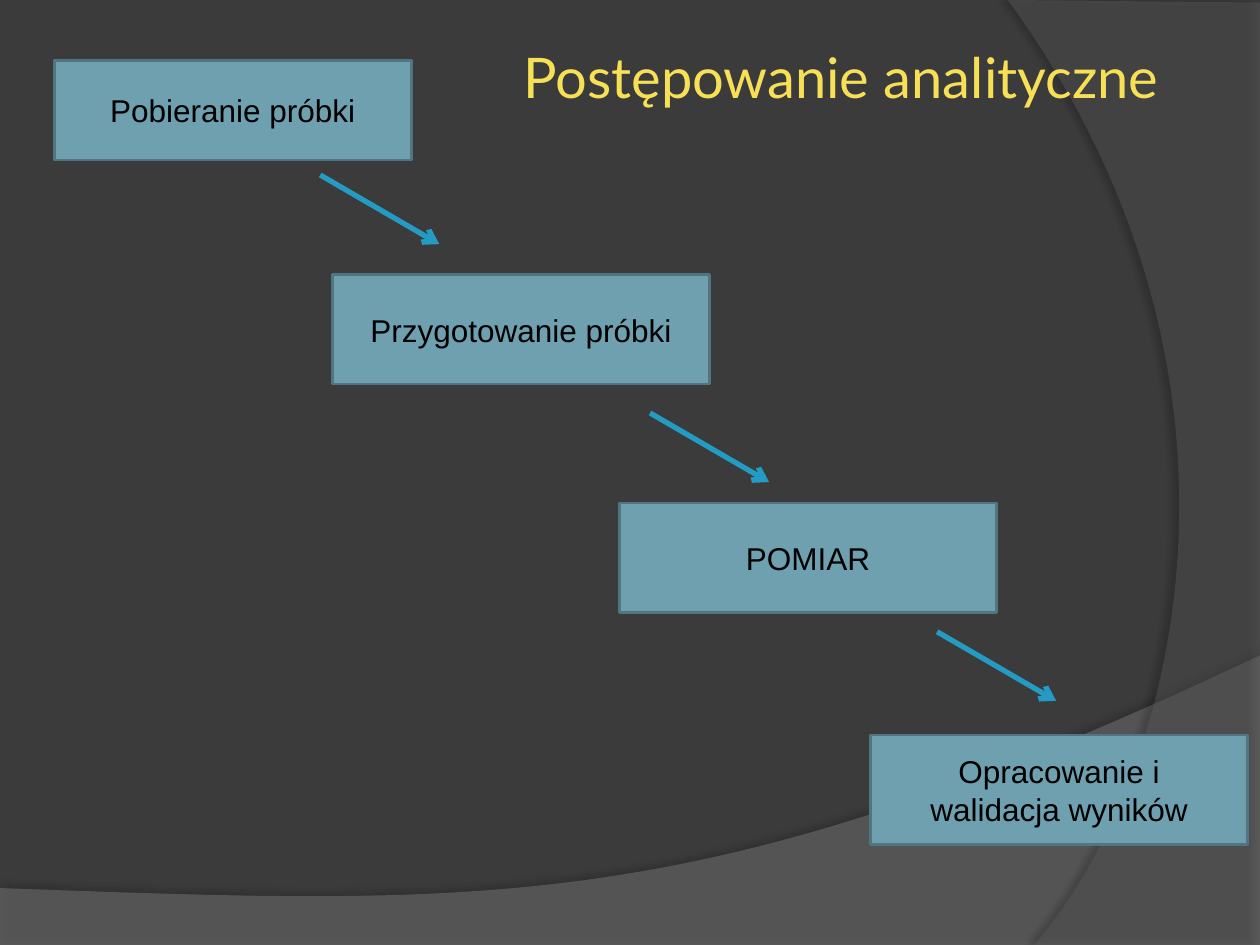
from lxml.etree import SubElement
from pptx import Presentation
from pptx.dml.color import RGBColor
from pptx.enum.shapes import MSO_CONNECTOR, MSO_SHAPE
from pptx.enum.text import MSO_ANCHOR, PP_ALIGN
from pptx.oxml.ns import qn
from pptx.util import Pt

COLORS = {
    "background": "3B3B3B", "wave": "7F7F7F", "arc": "5E5E5E", "shadow": "000000",
    "title": "F7DF56", "box": "6EA0B0", "outline": "517682",
    "label": "000000", "arrow": "239BC2",
}
CURVE_STEPS = 60

# text, left, top, width, height, side inset
STEPS = [
    ("Pobieranie próbki", 31, 34.5, 204, 57, 8),
    ("Przygotowanie próbki", 190, 157, 215.5, 62.5, 8),
    ("POMIAR", 354, 287.5, 215.5, 62.5, 8),
    ("Opracowanie i walidacja wyników", 497.5, 420, 215.5, 62.5, 24),
]
ARROW_STARTS = [(183, 100), (371.5, 236), (535.5, 361)]
ARROW_RUN, ARROW_DROP = 68, 39.5


def color(name):
    return RGBColor.from_string(COLORS[name])


def bezier(start, control_1, control_2, end):
    """Points along a cubic curve, both ends included."""
    points = []
    for step in range(CURVE_STEPS + 1):
        t = step / CURVE_STEPS
        weights = ((1 - t) ** 3, 3 * t * (1 - t) ** 2, 3 * t ** 2 * (1 - t), t ** 3)
        corners = (start, control_1, control_2, end)
        points.append(tuple(sum(w * c[axis] for w, c in zip(weights, corners))
                            for axis in (0, 1)))
    return points


def write(frame, text, *, font, size, ink, align, inset, inset_y=3.6):
    frame.word_wrap = True
    frame.vertical_anchor = MSO_ANCHOR.MIDDLE
    frame.margin_left = frame.margin_right = Pt(inset)
    frame.margin_top = frame.margin_bottom = Pt(inset_y)
    paragraph = frame.paragraphs[0]
    paragraph.alignment = align
    run = paragraph.add_run()
    run.text = text
    run.font.name = font
    run.font.size = Pt(size)
    run.font.color.rgb = color(ink)


class SlideBuilder:
    """Holds the text style and the slide being filled."""

    def __init__(self, slide, title_font="Lato", label_font="Arial"):
        self.slide = slide
        self.title_font = title_font
        self.label_font = label_font

    def background(self, name):
        fill = self.slide.background.fill
        fill.solid()
        fill.fore_color.rgb = color(name)

    def band(self, points, name, opacity, shadow_opacity, distance, direction):
        """Translucent outline with a soft shadow."""
        outline = [(Pt(x), Pt(y)) for x, y in points]
        builder = self.slide.shapes.build_freeform(*outline[0])
        builder.add_line_segments(outline[1:], close=True)
        shape = builder.convert_to_shape()
        shape.fill.solid()
        shape.fill.fore_color.rgb = color(name)
        shape.line.fill.background()
        properties = shape._element.spPr
        fill_color = properties.find(qn("a:solidFill"))[0]
        SubElement(fill_color, qn("a:alpha"), val=str(opacity * 1000))
        effects = SubElement(properties, qn("a:effectLst"))
        shadow = SubElement(effects, qn("a:outerShdw"), blurRad=str(Pt(4)),
                            dist=str(Pt(distance)), dir=str(direction * 60000),
                            rotWithShape="0")
        shadow_color = SubElement(shadow, qn("a:srgbClr"), val=COLORS["shadow"])
        SubElement(shadow_color, qn("a:alpha"), val=str(shadow_opacity * 1000))

    def title(self, text, left, top, width, height):
        title = self.slide.shapes.title
        title.left, title.top = Pt(left), Pt(top)
        title.width, title.height = Pt(width), Pt(height)
        write(title.text_frame, text, font=self.title_font, size=32, ink="title",
              align=PP_ALIGN.RIGHT, inset=3.6)
        self.slide.shapes._spTree.append(title._element)  # in front of the bands

    def step(self, text, left, top, width, height, inset):
        box = self.slide.shapes.add_shape(
            MSO_SHAPE.RECTANGLE, Pt(left), Pt(top), Pt(width), Pt(height))
        box.shadow.inherit = False
        box.fill.solid()
        box.fill.fore_color.rgb = color("box")
        box.line.color.rgb = color("outline")
        box.line.width = Pt(1.5)
        write(box.text_frame, text, font=self.label_font, size=18, ink="label",
              align=PP_ALIGN.CENTER, inset=inset)

    def arrow(self, x, y):
        arrow = self.slide.shapes.add_connector(
            MSO_CONNECTOR.STRAIGHT, Pt(x), Pt(y), Pt(x + ARROW_RUN), Pt(y + ARROW_DROP))
        arrow.line.color.rgb = color("arrow")
        arrow.line.width = Pt(3)
        SubElement(arrow.line._get_or_add_ln(), qn("a:tailEnd"), type="arrow")
        SubElement(arrow._element.spPr, qn("a:effectLst"))


def main():
    deck = Presentation()
    deck.slide_width, deck.slide_height = Pt(720), Pt(540)
    page = SlideBuilder(deck.slides.add_slide(deck.slide_layouts[5]))
    page.background("background")

    wave = [(0, 540.5), (720, 540.5)]
    wave += bezier((720, 374.5), (402.5, 525), (281.5, 517.5), (0, 507.5))
    page.band(wave, "wave", opacity=45, shadow_opacity=35, distance=3.5, direction=270)
    arc = [(720, 1.5), (720, 540)]
    arc += bezier((591, 540), (673, 445.5), (733, 216), (576, 0))
    page.band(arc, "arc", opacity=40, shadow_opacity=45, distance=4, direction=180)

    page.title("Postępowanie analityczne", 78, -1.5, 588, 90)
    for step in STEPS:
        page.step(*step)
    for start in ARROW_STARTS:
        page.arrow(*start)
    deck.save("out.pptx")


if __name__ == "__main__":
    main()
